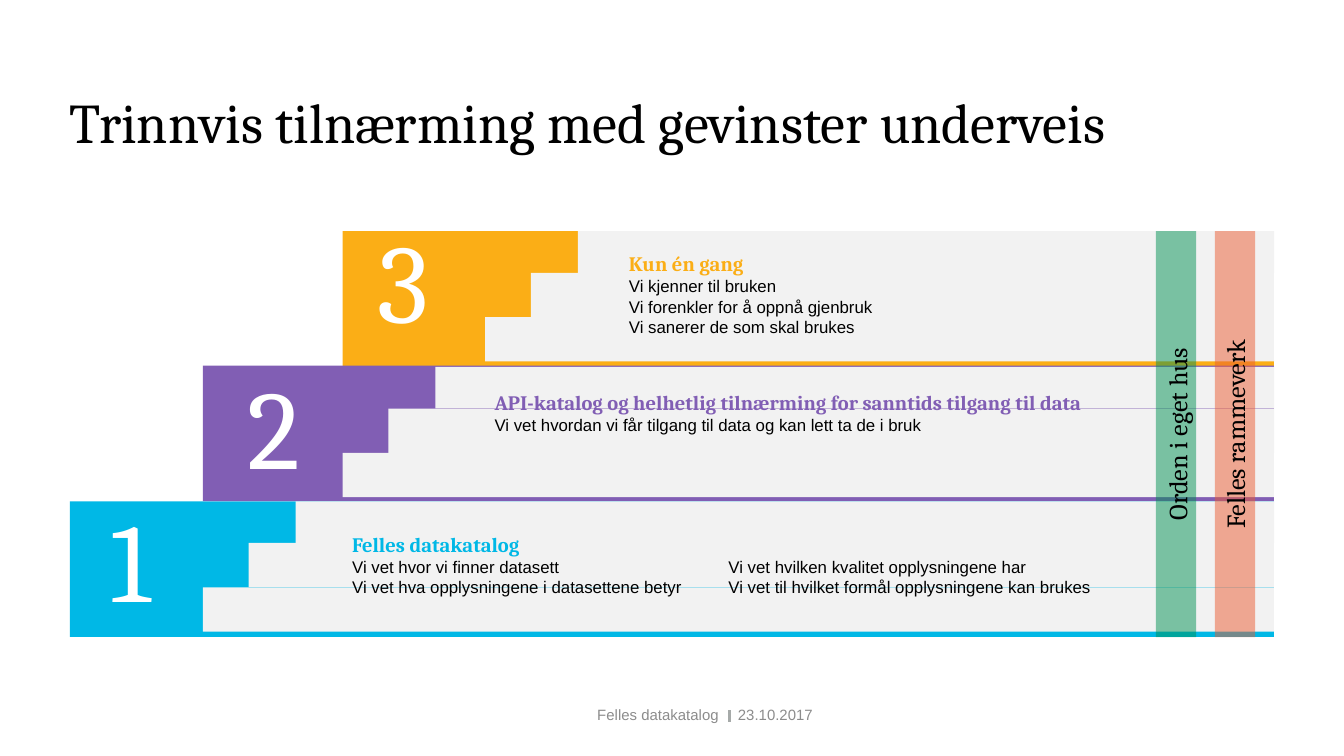
from lxml import etree
from pptx import Presentation
from pptx.dml.color import RGBColor
from pptx.enum.shapes import MSO_CONNECTOR, MSO_SHAPE
from pptx.enum.text import MSO_ANCHOR, MSO_AUTO_SIZE, PP_ALIGN
from pptx.oxml.ns import qn
from pptx.util import Inches, Pt

RECT = MSO_SHAPE.RECTANGLE
LINE = MSO_CONNECTOR.STRAIGHT
MIDDLE = MSO_ANCHOR.MIDDLE
GROW, FIXED = MSO_AUTO_SIZE.SHAPE_TO_FIT_TEXT, MSO_AUTO_SIZE.NONE
CENTER, RIGHT = PP_ALIGN.CENTER, PP_ALIGN.RIGHT

RIGHT_EDGE = 9.48
BAND_HEIGHT = 1.01
TREADS = [(0, 0.64, 0.33), (0.34, 0.31, 0.33), (0.69, 0, 0.31)]
TAB = 2.8
HEADING = {"name": "Cambria", "size": Pt(11), "bold": True}
BODY = {"name": "Arial", "size": Pt(9), "bold": False}
NUMBER = {"name": "Cambria", "size": Pt(60)}
PILLAR = {"name": "Cambria", "size": Pt(14)}
TITLE = {"name": "Cambria", "size": Pt(30)}
FOOTER = {"name": "Arial", "size": Pt(8)}
INSET = {"word_wrap": True, "margin_left": Inches(0.07), "margin_right": Inches(0.07),
         "margin_top": Inches(0.04), "margin_bottom": Inches(0.04), "auto_size": GROW}
PLAIN = {"word_wrap": True, "margin_left": 0, "margin_right": 0, "margin_top": 0,
         "margin_bottom": 0, "vertical_anchor": MIDDLE, "auto_size": FIXED}

STEPS = [
    {"left": 0.52, "top": 3.73, "tread": (1.51, 3.73), "color": "00B8E6",
     "number": ("1", 0.75, 3.61, 0.51, 1.09), "box": (2.55, 3.92, 5.76, 0.56),
     "heading": "Felles datakatalog",
     "lines": ["Vi vet hvor vi finner datasett\tVi vet hvilken kvalitet opplysningene har",
               "Vi vet hva opplysningene i datasettene betyr\t"
               "Vi vet til hvilket formål opplysningene kan brukes"]},
    {"left": 2.55, "top": 1.72, "tread": (3.61, 1.72), "color": "FBAE16",
     "number": ("3", 2.74, 1.53, 0.62, 1.09), "box": (4.61, 1.83, 3.7, 0.72),
     "heading": "Kun én gang",
     "lines": ["Vi kjenner til bruken", "Vi forenkler for å oppnå gjenbruk",
               "Vi sanerer de som skal brukes"]},
    {"left": 1.51, "top": 2.72, "tread": (2.55, 2.73), "color": "815EB4",
     "number": ("2", 1.77, 2.62, 0.62, 1.09), "box": (3.61, 2.86, 4.7, 0.6),
     "heading": "API-katalog og helhetlig tilnærming for sanntids tilgang til data",
     "lines": ["Vi vet hvordan vi får tilgang til data og kan lett ta de i bruk"]},
]
PILLARS = [("Orden i eget hus", 8.6, 7.25, "019153"),
           ("Felles rammeverk", 9.04, 7.68, "EB5C31")]


def rgb(color):
    return RGBColor.from_string(color)


def add_rect(s, left, top, width, height, color, alpha=None):
    sp = s.shapes.add_shape(RECT, Inches(left), Inches(top), Inches(width), Inches(height))
    sp.shadow.inherit = False
    sp.fill.solid()
    sp.fill.fore_color.rgb = rgb(color)
    sp.line.fill.background()
    if alpha:
        clr = sp._element.spPr.find(qn("a:solidFill"))[0]
        etree.SubElement(clr, qn("a:alpha")).set("val", str(alpha * 1000))


def add_text(s, box, lines, frame=INSET, align=None, spacing=None, tab=None, rotation=0):
    sp = s.shapes.add_textbox(*(Inches(v) for v in box))
    sp.rotation = rotation
    tf = sp.text_frame
    for name, value in frame.items():
        setattr(tf, name, value)
    for i, (text, font, color) in enumerate(lines):
        p = tf.add_paragraph() if i else tf.paragraphs[0]
        if tab:
            tabs = etree.SubElement(p._p.get_or_add_pPr(), qn("a:tabLst"))
            stop = etree.SubElement(tabs, qn("a:tab"))
            stop.set("pos", str(Inches(tab)))
            stop.set("algn", "l")
        p.alignment = align
        p.line_spacing = spacing
        r = p.add_run()
        r.text = text
        for name, value in font.items():
            setattr(r.font, name, value)
        r.font.color.rgb = rgb(color)


def add_line(s, x1, y1, x2, y2, color, width):
    line = s.shapes.add_connector(LINE, Inches(x1), Inches(y1), Inches(x2), Inches(y2))
    line.line.color.rgb = rgb(color)
    line.line.width = Pt(width)
    etree.SubElement(line._element.spPr, qn("a:effectLst"))


def add_band(s, step):
    left = step["left"]
    add_rect(s, left, step["top"], RIGHT_EDGE - left, BAND_HEIGHT, step["color"])


def add_treads(s, step):
    left, top = step["tread"]
    for dx, dy, height in TREADS:
        add_rect(s, left + dx, top + dy, RIGHT_EDGE - left - dx, height, "F2F2F2")


def add_step_text(s, step):
    number, *box = step["number"]
    add_text(s, box, [(number, NUMBER, "FFFFFF")], {**INSET, "word_wrap": False})
    lines = [(step["heading"], HEADING, step["color"])]
    lines += [(text, BODY, "000000") for text in step["lines"]]
    add_text(s, step["box"], lines, tab=TAB)


def add_pillar(s, text, left, text_left, color):
    add_rect(s, left, 1.72, 0.3, 3.02, color, alpha=50)
    add_text(s, (text_left, 3.07, 3.02, 0.32), [(text, PILLAR, "000000")],
             align=CENTER, rotation=270)


def main():
    prs = Presentation()
    prs.slide_width = Inches(10)
    prs.slide_height = prs.slide_width * 9 // 16
    s = prs.slides.add_slide(prs.slide_layouts[6])
    add_line(s, 5.43, 5.37, 5.43, 5.28, "A6AAA9", 1.5)
    for add_part in (add_band, add_treads, add_step_text):
        for step in STEPS:
            add_part(s, step)
    for pillar in PILLARS:
        add_pillar(s, *pillar)
    add_text(s, (0.52, 0.47, 8.96, 0.93),
             [("Trinnvis tilnærming med gevinster underveis", TITLE, "000000")],
             PLAIN, spacing=0.9)
    add_text(s, (1.66, 5.24, 3.69, 0.15), [("Felles datakatalog", FOOTER, "8C8C8C")],
             PLAIN, align=RIGHT)
    add_text(s, (5.49, 5.24, 0.69, 0.15), [("23.10.2017", FOOTER, "8C8C8C")], PLAIN)
    prs.save("out.pptx")


if __name__ == "__main__":
    main()
